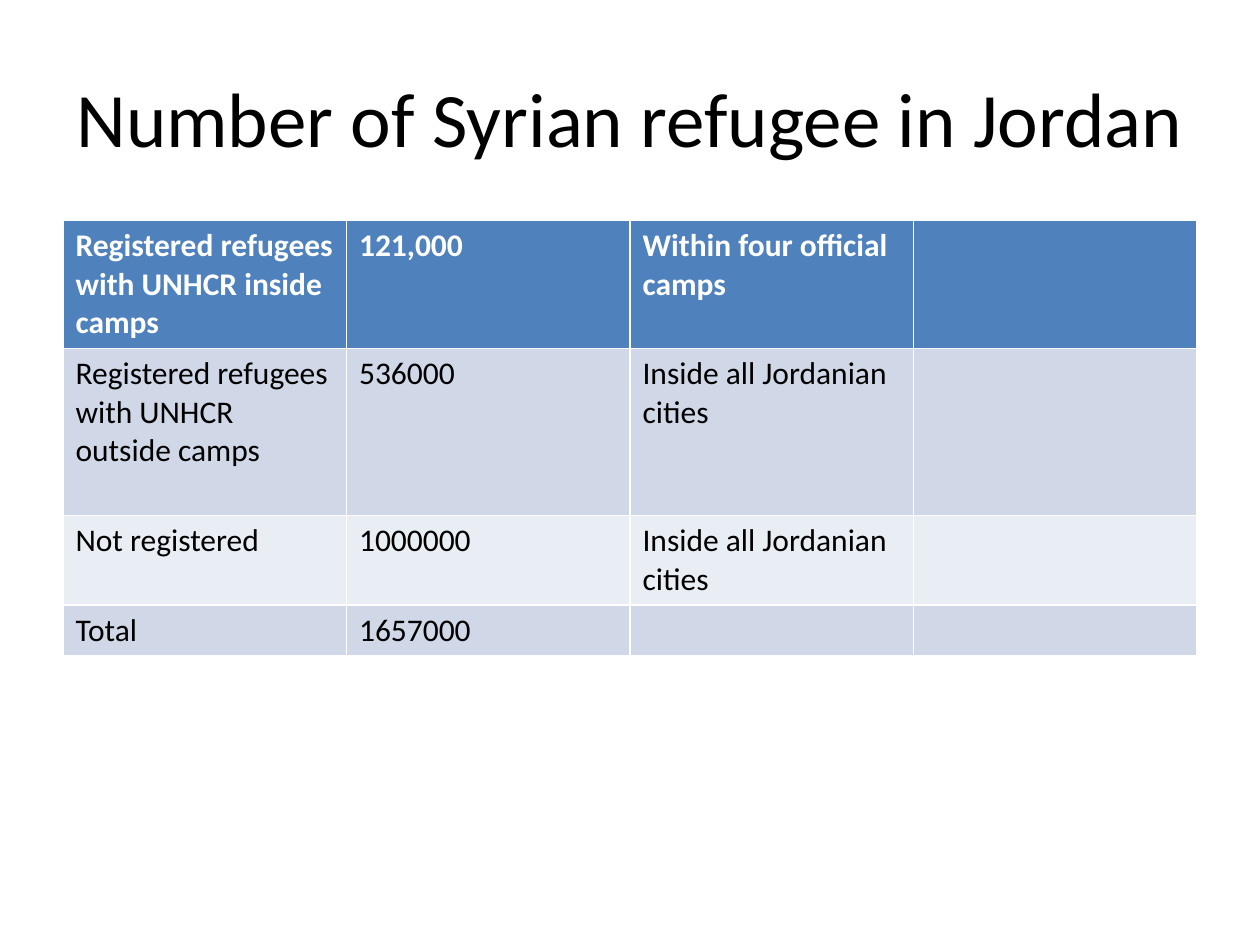
from pptx import Presentation
from pptx.dml.color import RGBColor
from pptx.enum.text import MSO_ANCHOR, PP_ALIGN
from pptx.util import Pt

MIDDLE = MSO_ANCHOR.MIDDLE
CENTER = PP_ALIGN.CENTER

BLACK = RGBColor(0x00, 0x00, 0x00)
WHITE = RGBColor(0xFF, 0xFF, 0xFF)
HEADER_BLUE = RGBColor(0x4F, 0x81, 0xBD)
BANDS = (RGBColor(0xD0, 0xD8, 0xE8), RGBColor(0xE9, 0xED, 0xF4))

HEADING = "Number of Syrian refugee in Jordan"
REFUGEES = [
    ("Registered refugees with UNHCR inside camps", "121,000", "Within four official camps", ""),
    ("Registered refugees with UNHCR outside camps", "536000", "Inside all Jordanian cities", ""),
    ("Not registered", "1000000", "Inside all Jordanian cities", ""),
    ("Total", "1657000", "", ""),
]
ROW_HEIGHTS = (72.6, 95.4, 51, 29.2)

MARGIN = 36
CONTENT_WIDTH = 648
TABLE_TOP = 126

HEADING_FONT = {"name": "Calibri", "size": Pt(44)}
HEADER_FONT = {"name": "Calibri", "size": Pt(18), "bold": True}
BODY_FONT = {**HEADER_FONT, "bold": False}


def apply_font(paragraph, values, color):
    for attribute, value in values.items():
        setattr(paragraph.font, attribute, value)
    paragraph.font.color.rgb = color


def add_heading(slide):
    heading = slide.shapes.title
    place = {"left": MARGIN, "top": 21.6, "width": CONTENT_WIDTH, "height": 90}
    for attribute, value in place.items():
        setattr(heading, attribute, Pt(value))
    heading.text_frame.text = HEADING
    heading.text_frame.vertical_anchor = MIDDLE
    line = heading.text_frame.paragraphs[0]
    line.alignment = CENTER
    apply_font(line, HEADING_FONT, BLACK)


def add_refugee_table(slide):
    table = slide.shapes.add_table(
        len(REFUGEES), len(REFUGEES[0]),
        Pt(MARGIN), Pt(TABLE_TOP), Pt(CONTENT_WIDTH), Pt(sum(ROW_HEIGHTS)),
    ).table
    for r, (group, height) in enumerate(zip(REFUGEES, ROW_HEIGHTS)):
        table.rows[r].height = Pt(height)
        if r == 0:
            fill, font, color = HEADER_BLUE, HEADER_FONT, WHITE
        else:
            fill, font, color = BANDS[(r - 1) % 2], BODY_FONT, BLACK
        for c, entry in enumerate(group):
            cell = table.cell(r, c)
            cell.text = entry
            cell.fill.solid()
            cell.fill.fore_color.rgb = fill
            apply_font(cell.text_frame.paragraphs[0], font, color)


def main():
    deck = Presentation()
    deck.slide_width, deck.slide_height = Pt(720), Pt(540)
    slide = deck.slides.add_slide(deck.slide_layouts.get_by_name("Title Only"))
    slide.background.fill.solid()
    slide.background.fill.fore_color.rgb = WHITE
    add_heading(slide)
    add_refugee_table(slide)
    deck.save("out.pptx")


if __name__ == "__main__":
    main()
